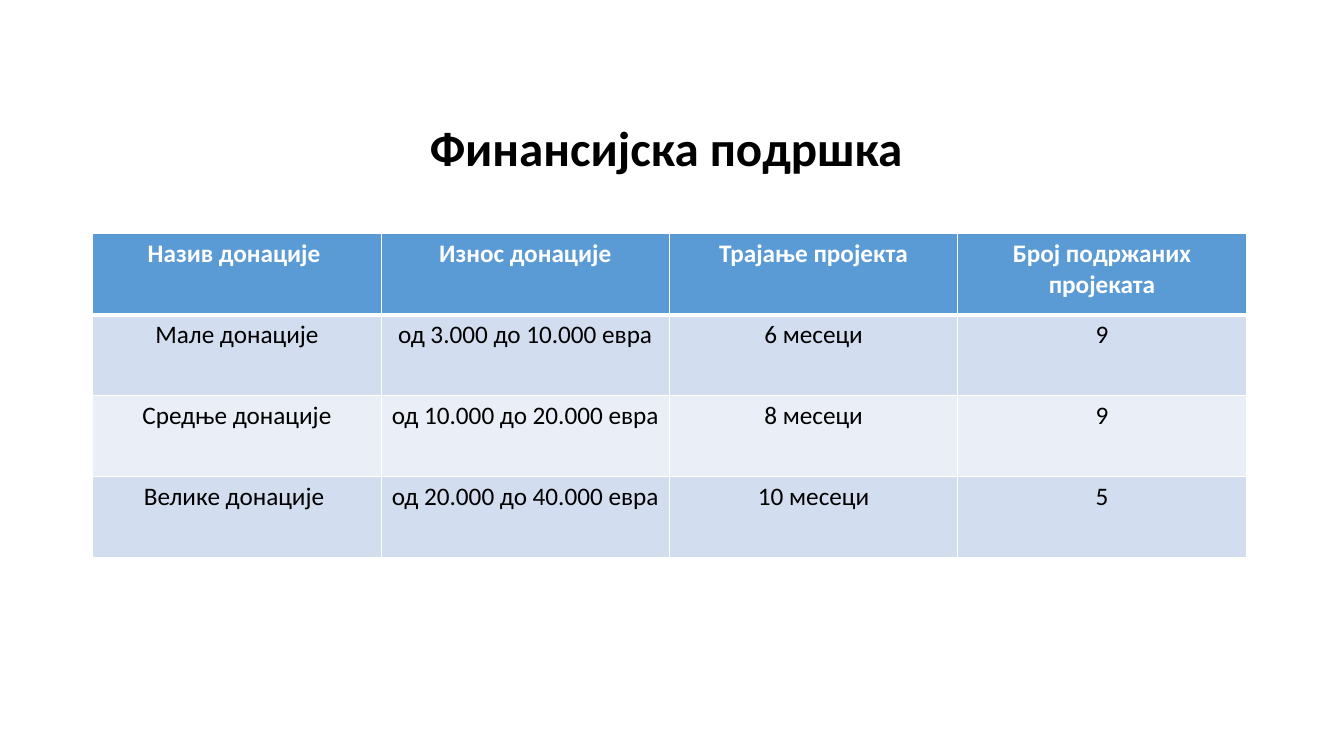
from lxml import etree
from pptx import Presentation
from pptx.dml.color import RGBColor
from pptx.enum.text import MSO_ANCHOR, PP_ALIGN
from pptx.oxml.ns import qn
from pptx.util import Inches, Pt

WHITE = RGBColor(0xFF, 0xFF, 0xFF)
BLACK = RGBColor(0x00, 0x00, 0x00)
HEADER_BLUE = RGBColor(0x5B, 0x9B, 0xD5)
BAND_DARK = RGBColor(0xD2, 0xDE, 0xEF)
BAND_LIGHT = RGBColor(0xEA, 0xEF, 0xF7)

DONATIONS = [
    ["Назив донације ", "Износ донације", "Трајање пројекта", "Број подржаних пројеката"],
    ["Мале донације", "од 3.000 до 10.000 евра", "6 месеци", "9"],
    ["Средње донације", "од 10.000 до 20.000 евра", "8 месеци", "9"],
    ["Велике донације ", "од 20.000 до 40.000 евра", "10 месеци", "5"],
]


def format_text(paragraph, size, color, bold):
    paragraph.alignment = PP_ALIGN.CENTER
    font = paragraph.runs[0].font
    font.name = "Calibri"
    font.size = Pt(size)
    font.bold = bold
    font.color.rgb = color


def add_border(cell, side, width):
    line = etree.SubElement(cell._tc.get_or_add_tcPr(), qn(f"a:ln{side}"), w=str(Pt(width)))
    fill = etree.SubElement(line, qn("a:solidFill"))
    etree.SubElement(fill, qn("a:srgbClr"), val=str(WHITE))


presentation = Presentation()
presentation.slide_width = Inches(13.33)
presentation.slide_height = Inches(7.5)
slide = presentation.slides.add_slide(presentation.slide_layouts[6])

# Title, set low in its box by the top margin
title = slide.shapes.add_textbox(Inches(0.86), Inches(0.5), Inches(11.5), Inches(1.45))
text_frame = title.text_frame
text_frame.word_wrap = True
text_frame.vertical_anchor = MSO_ANCHOR.MIDDLE
text_frame.margin_top = Inches(0.58)
text_frame.text = "Финансијска подршка"
text_frame.paragraphs[0].line_spacing = 0.9
format_text(text_frame.paragraphs[0], 35, BLACK, True)

# Donation table
table = slide.shapes.add_table(
    len(DONATIONS), len(DONATIONS[0]), Inches(0.92), Inches(2.32), Inches(11.44), Inches(3.21)
).table

for row_index, row in enumerate(DONATIONS):
    is_header = row_index == 0
    if is_header:
        row_color = HEADER_BLUE
    else:
        row_color = BAND_DARK if row_index % 2 else BAND_LIGHT
    for column_index, text in enumerate(row):
        cell = table.cell(row_index, column_index)
        cell.text = text
        format_text(cell.text_frame.paragraphs[0], 18, WHITE if is_header else BLACK, is_header)
        # The rule under the header is thicker
        for side in "LRTB":
            thick = (side == "B" and is_header) or (side == "T" and row_index == 1)
            add_border(cell, side, 3 if thick else 1)
        cell.fill.solid()
        cell.fill.fore_color.rgb = row_color

presentation.save("out.pptx")
